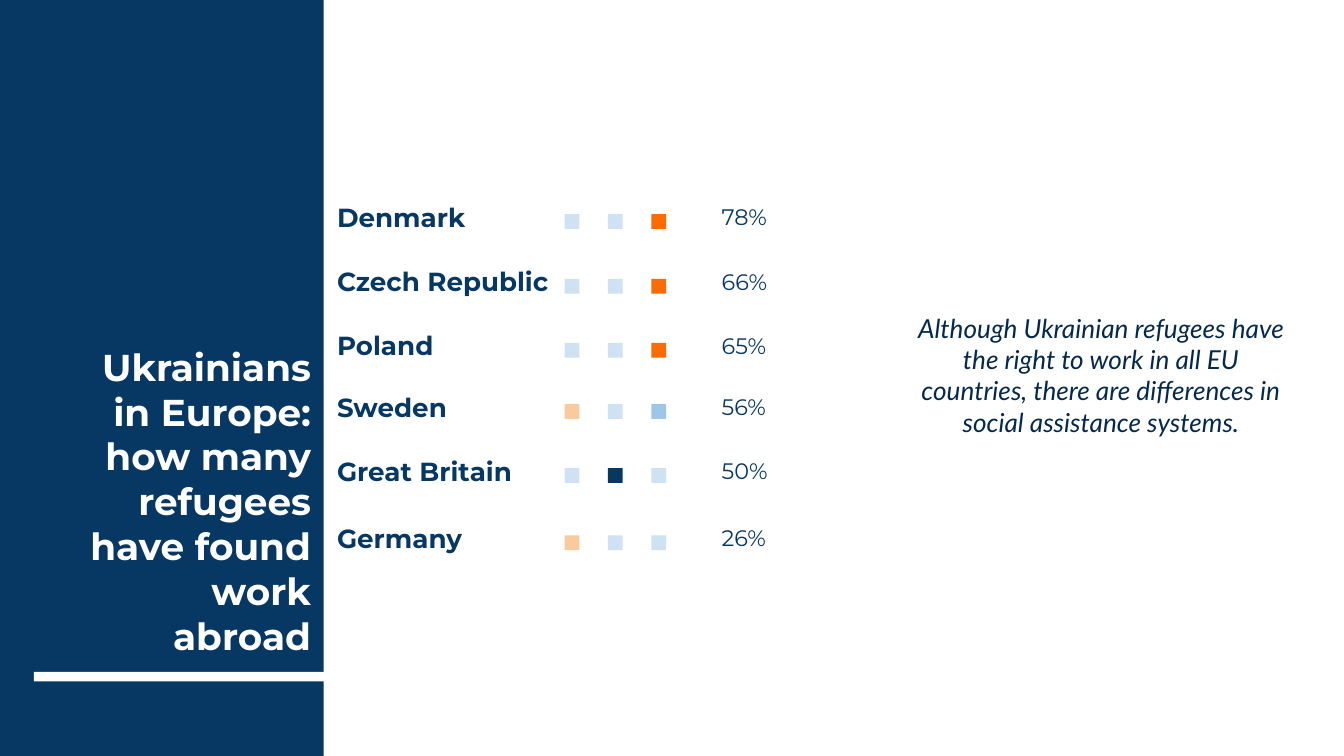
import dataclasses
import typing

import pptx
import pptx.dml.color
import pptx.enum.shapes
import pptx.enum.text
import pptx.util

Cm = pptx.util.Cm
Align = pptx.enum.text.PP_ALIGN
Anchor = pptx.enum.text.MSO_ANCHOR
Fit = pptx.enum.text.MSO_AUTO_SIZE


@dataclasses.dataclass(frozen=True)
class Theme:
    navy: str = "073763"
    ink: str = "05294A"
    white: str = "FFFFFF"
    pale: str = "CFE2F3"
    sky: str = "9FC5E8"
    peach: str = "F9CB9C"
    orange: str = "FF6B03"
    head: str = "Montserrat"
    body: str = "Lato"
    large: int = 20
    medium: int = 14
    small: int = 12


class Box(typing.NamedTuple):
    left: float
    top: float
    width: float
    height: float

    def place(self) -> tuple:
        return tuple(Cm(side) for side in self)


class Style(typing.NamedTuple):
    font: str
    size: int
    color: str
    bold: bool = False
    italic: bool = False
    align: Align = Align.LEFT
    anchor: Anchor = Anchor.MIDDLE
    inset: float = 0.25
    fit: Fit = Fit.NONE


class Row(typing.NamedTuple):
    land: str
    share: str
    top: float
    width: float
    marks: tuple


THEME = Theme()
HIGH = (THEME.pale, THEME.pale, THEME.orange)
ROWS = (
    Row("Denmark", "78%", 3.73, 3.78, HIGH),
    Row("Czech Republic", "66%", 4.95, 4.57, HIGH),
    Row("Poland", "65%", 6.16, 3.78, HIGH),
    Row("Sweden", "56%", 7.32, 3.78, (THEME.peach, THEME.pale, THEME.sky)),
    Row("Great Britain", "50%", 8.53, 4.34, (THEME.pale, THEME.navy, THEME.pale)),
    Row("Germany", "26%", 9.8, 3.78, (THEME.peach, THEME.pale, THEME.pale)),
)
TITLE = Style(THEME.head, THEME.large, THEME.white, bold=True,
              align=Align.RIGHT, anchor=Anchor.BOTTOM)
LAND = Style(THEME.head, THEME.medium, THEME.navy, bold=True)
SHARE = Style(THEME.head, THEME.small, THEME.navy)
NOTE = Style(THEME.body, THEME.medium, THEME.ink, italic=True,
             align=Align.CENTER, anchor=Anchor.TOP, inset=0.13,
             fit=Fit.SHAPE_TO_FIT_TEXT)


def paint(shapes: typing.Any, box: Box, color: str) -> typing.Any:
    rect = shapes.add_shape(pptx.enum.shapes.MSO_SHAPE.RECTANGLE, *box.place())
    rect.shadow.inherit = False
    rect.fill.solid()
    rect.fill.fore_color.rgb = pptx.dml.color.RGBColor.from_string(color)
    rect.line.fill.background()
    return rect


def write(shape: typing.Any, text: str, style: Style) -> None:
    frame = shape.text_frame
    frame.text = text
    frame.word_wrap = True
    frame.auto_size = style.fit
    frame.vertical_anchor = style.anchor
    frame.margin_left = frame.margin_right = Cm(0.25)
    frame.margin_top = frame.margin_bottom = Cm(style.inset)
    line = frame.paragraphs[0]
    line.alignment = style.align
    font = line.runs[0].font
    font.name = style.font
    font.size = pptx.util.Pt(style.size)
    font.bold = style.bold
    font.italic = style.italic
    font.color.rgb = pptx.dml.color.RGBColor.from_string(style.color)


def label(shapes: typing.Any, box: Box, text: str, style: Style) -> None:
    write(shapes.add_textbox(*box.place()), text, style)


def draw_row(shapes: typing.Any, row: Row) -> None:
    label(shapes, Box(6.12, row.top, row.width, 0.74), row.land, LAND)
    label(shapes, Box(13.39, row.top, 10.39, 0.74), row.share, SHARE)
    group = shapes.add_group_shape()
    for step, color in enumerate(row.marks):
        paint(group.shapes, Box(10.67 + 0.82 * step, row.top + 0.32, 0.28, 0.28), color)


def main() -> None:
    deck = pptx.Presentation()
    deck.slide_width, deck.slide_height = Cm(25.4), Cm(14.29)
    slide = deck.slides.add_slide(deck.slide_layouts[5])
    shapes = slide.shapes
    title = shapes.title
    for box, color in (
        (Box(-0.1, -0.18, 6.22, 14.66), THEME.navy),
        (Box(0.64, 12.7, 5.79, 0.18), THEME.white),
    ):
        title.element.addprevious(paint(shapes, box, color).element)
    title.left, title.top, title.width, title.height = Box(1.3, 9.68, 4.83, 3).place()
    write(title, "Ukrainians in Europe: how many refugees have found work abroad", TITLE)
    for row in ROWS:
        draw_row(shapes, row)
    label(shapes, Box(17.04, 5.77, 7.54, 2.64),
          "Although Ukrainian refugees have the right to work in all EU countries, "
          "there are differences in social assistance systems.", NOTE)
    deck.save("out.pptx")


if __name__ == "__main__":
    main()
